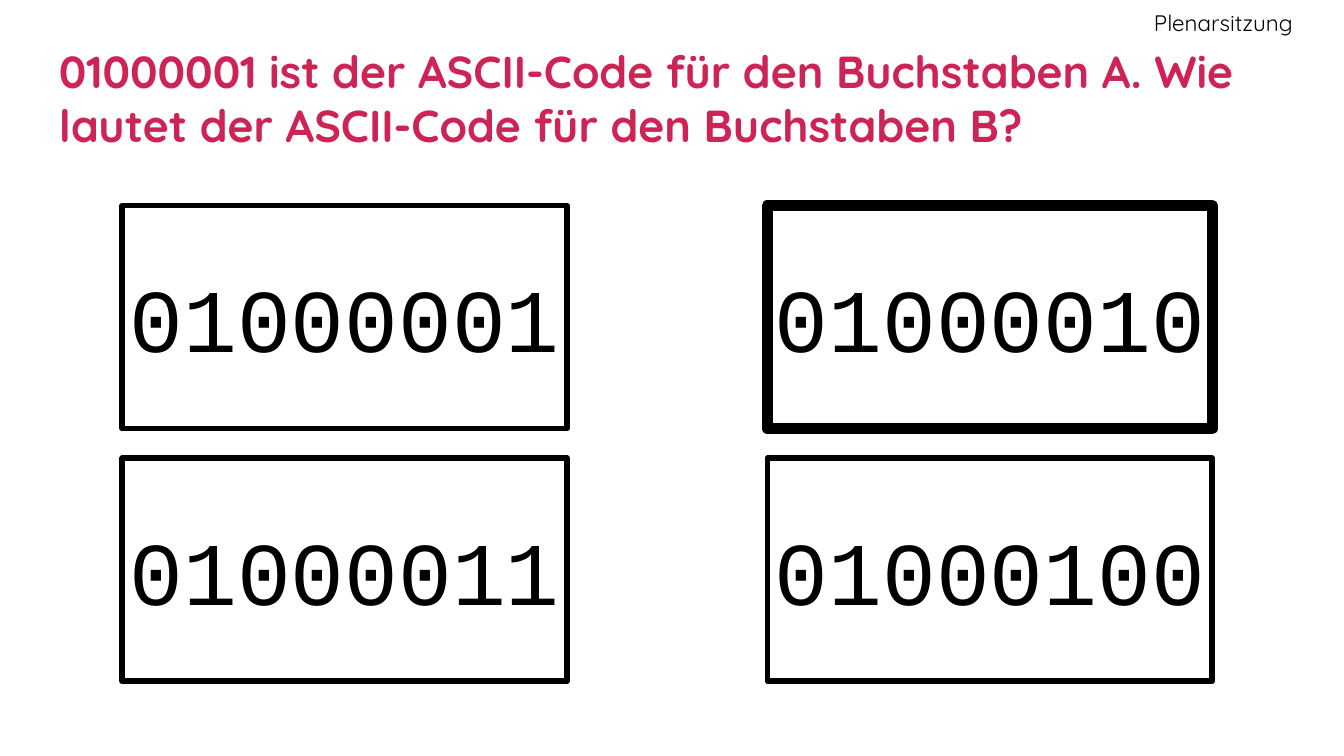
from pptx import Presentation
from pptx import util as u
from pptx.dml.color import RGBColor
from pptx.enum import shapes, text

PINK = RGBColor(0xCD, 0x23, 0x55)
BLACK = RGBColor(0, 0, 0)
WHITE = RGBColor(255, 255, 255)

deck = Presentation()
deck.slide_width = u.Inches(10)
deck.slide_height = deck.slide_width * 9 // 16
slide = deck.slides.add_slide(deck.slide_layouts[6])


def place(box):
    return [u.Inches(side) for side in box]


def write(shape, words, size, font, color, align, pads, bold=False):
    """Fill a shape with one run; pads are left, top, right, bottom in inches."""
    frame = shape.text_frame
    frame.word_wrap = True
    frame.vertical_anchor = text.MSO_ANCHOR.MIDDLE
    (frame.margin_left, frame.margin_top,
     frame.margin_right, frame.margin_bottom) = place(pads)
    para = frame.paragraphs[0]
    para.alignment = align
    run = para.add_run()
    run.text = words
    run.font.size = u.Pt(size)
    run.font.name = font
    run.font.bold = bold
    run.font.color.rgb = color


# Heading
title = slide.shapes.add_textbox(*place((0.34, 0.34, 9.32, 0.77)))
write(title, "01000001 ist der ASCII-Code für den Buchstaben A. "
      "Wie lautet der ASCII-Code für den Buchstaben B?",
      24, "Quicksand", PINK, text.PP_ALIGN.LEFT, [0.1] * 4, bold=True)
label = slide.shapes.add_textbox(*place((7.48, 0, 2.14, 0.34)))
write(label, "Plenarsitzung", 12, "Quicksand", BLACK,
      text.PP_ALIGN.RIGHT, (0.1, 0.1, 0, 0.1))

# Answer grid, two columns by two rows; the right answer has a thick frame
LEFT, TOP = 0.91, 1.53
WIDE, HIGH = 3.31, 1.66
COL, ROW = 4.8, 1.88
RIGHT = "01000010"
codes = ["01000001", RIGHT, "01000011", "01000100"]

for index, code in enumerate(codes):
    row, col = divmod(index, 2)
    card = slide.shapes.add_shape(
        shapes.MSO_SHAPE.RECTANGLE,
        *place((LEFT + col * COL, TOP + row * ROW, WIDE, HIGH)))
    card.shadow.inherit = False
    card.fill.solid()
    card.fill.fore_color.rgb = WHITE
    card.line.color.rgb = BLACK
    card.line.width = u.Pt(6 if code == RIGHT else 3)
    write(card, code, 48, "Courier New", BLACK,
          text.PP_ALIGN.CENTER, [0.05] * 4)

deck.save("out.pptx")
